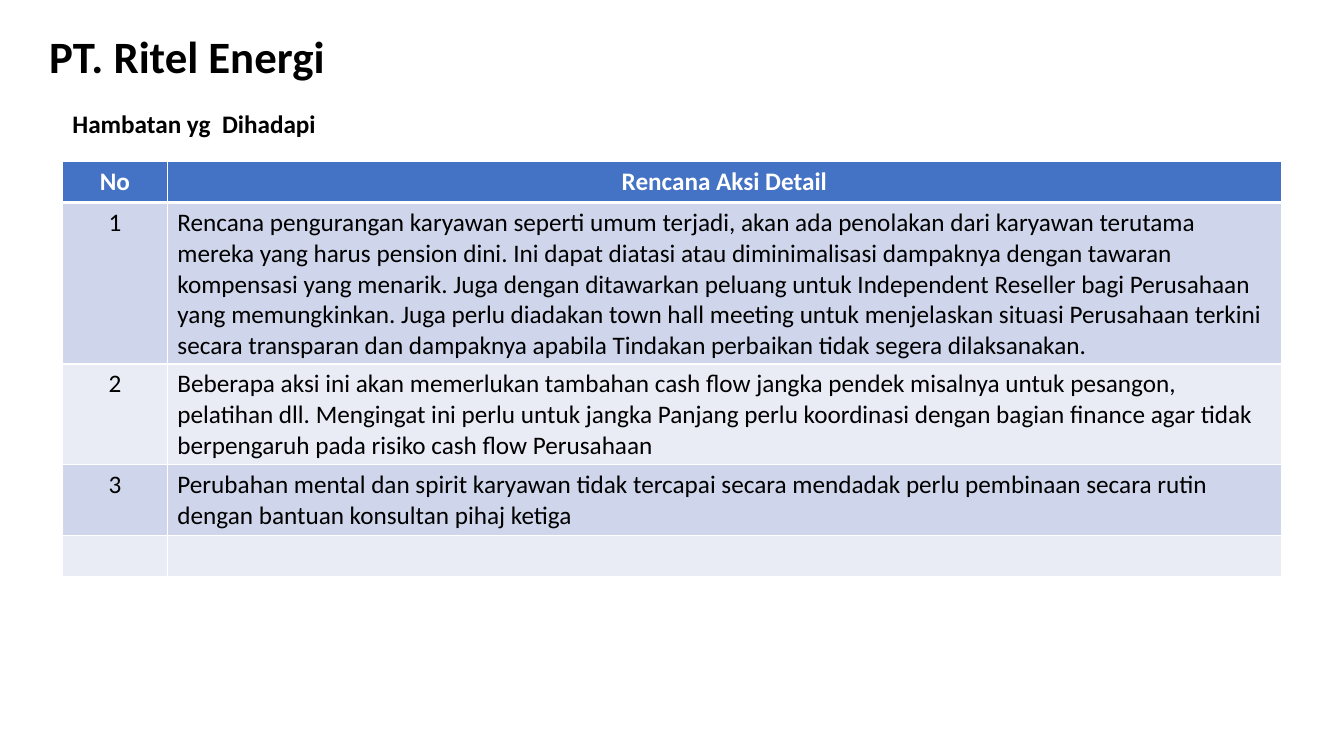
from dataclasses import dataclass

from lxml.etree import SubElement
from pptx import Presentation
from pptx.dml.color import RGBColor
from pptx.enum.text import MSO_AUTO_SIZE, PP_ALIGN
from pptx.oxml.ns import qn
from pptx.slide import Slide
from pptx.table import _Cell
from pptx.text.text import TextFrame
from pptx.util import Inches, Pt

FONT = "Calibri"
COLORS = {
    "text": "000000",
    "white": "FFFFFF",
    "header": "4472C4",
    "band_dark": "CFD5EA",
    "band_light": "E9EBF5",
}


@dataclass
class Label:
    text: str
    left: float
    top: float
    width: float
    height: float
    size: int


@dataclass
class Row:
    number: str
    detail: str
    height: float


LABELS = [
    Label("PT. Ritel Energi", 0.39, 0.24, 2.96, 0.64, 32),
    Label("Hambatan yg  Dihadapi", 0.62, 1.03, 2.64, 0.4, 18),
]
COL_WIDTHS = [1.04, 11.05]
ROWS = [
    Row("No", "Rencana Aksi Detail", 0.41),
    Row("1", "Rencana pengurangan karyawan seperti umum terjadi, akan ada penolakan "
        "dari karyawan terutama mereka yang harus pension dini. Ini dapat diatasi atau "
        "diminimalisasi dampaknya dengan tawaran kompensasi yang menarik. Juga dengan "
        "ditawarkan peluang untuk Independent Reseller bagi Perusahaan yang memungkinkan. "
        "Juga perlu diadakan town hall meeting untuk menjelaskan situasi Perusahaan terkini "
        "secara transparan dan dampaknya apabila Tindakan perbaikan tidak segera "
        "dilaksanakan.", 1.59),
    Row("2", "Beberapa aksi ini akan memerlukan tambahan cash flow jangka pendek misalnya "
        "untuk pesangon, pelatihan dll. Mengingat ini perlu untuk jangka Panjang perlu "
        "koordinasi dengan bagian finance agar tidak berpengaruh pada risiko cash flow "
        "Perusahaan", 1.0),
    Row("3", "Perubahan mental dan spirit karyawan tidak tercapai secara mendadak perlu "
        "pembinaan secara rutin dengan bantuan konsultan pihaj ketiga", 0.7),
    Row("", "", 0.41),
]


def rgb(name: str) -> RGBColor:
    return RGBColor.from_string(COLORS[name])


def add_text(tf: TextFrame, text: str, size: int, color: str, bold: bool,
             align: PP_ALIGN = PP_ALIGN.LEFT) -> None:
    p = tf.paragraphs[0]
    p.alignment = align
    p.font.size = Pt(size)
    if text:
        r = p.add_run()
        r.text = text
        r.font.name = FONT
        r.font.size = Pt(size)
        r.font.bold = bold
        r.font.color.rgb = rgb(color)


def add_label(s: Slide, label: Label) -> None:
    box = s.shapes.add_textbox(Inches(label.left), Inches(label.top),
                               Inches(label.width), Inches(label.height))
    tf = box.text_frame
    tf.word_wrap = False
    tf.auto_size = MSO_AUTO_SIZE.SHAPE_TO_FIT_TEXT
    add_text(tf, label.text, label.size, "text", True)


def set_borders(cell: _Cell, top: int, bottom: int) -> None:
    tc_pr = cell._tc.get_or_add_tcPr()
    widths = {"a:lnL": 1, "a:lnR": 1, "a:lnT": top, "a:lnB": bottom}
    for i, (tag, width) in enumerate(widths.items()):
        ln = SubElement(tc_pr, qn(tag), w=str(Pt(width)))
        fill = SubElement(ln, qn("a:solidFill"))
        SubElement(fill, qn("a:srgbClr"), val=COLORS["white"])
        tc_pr.insert(i, ln)  # borders come before the cell fill


def add_action_table(s: Slide) -> None:
    height = sum(row.height for row in ROWS)
    table = s.shapes.add_table(len(ROWS), len(COL_WIDTHS), Inches(0.62), Inches(1.6),
                               Inches(sum(COL_WIDTHS)), Inches(height)).table
    for col, width in zip(table.columns, COL_WIDTHS):
        col.width = Inches(width)
    for i, row in enumerate(ROWS):
        table.rows[i].height = Inches(row.height)
        header = i == 0
        band = "header" if header else "band_dark" if i % 2 else "band_light"
        for j, text in enumerate((row.number, row.detail)):
            cell = table.cell(i, j)
            cell.fill.solid()
            cell.fill.fore_color.rgb = rgb(band)
            set_borders(cell, top=3 if i == 1 else 1, bottom=3 if header else 1)
            centered = header or j == 0
            add_text(cell.text_frame, text, 18, "white" if header else "text", header,
                     PP_ALIGN.CENTER if centered else PP_ALIGN.LEFT)


def main() -> None:
    prs = Presentation()
    prs.slide_width, prs.slide_height = Inches(13.33), Inches(7.5)
    s = prs.slides.add_slide(prs.slide_layouts[6])

    # Title and subtitle
    for label in LABELS:
        add_label(s, label)

    # Obstacles and action plan
    add_action_table(s)

    prs.save("out.pptx")


if __name__ == "__main__":
    main()
